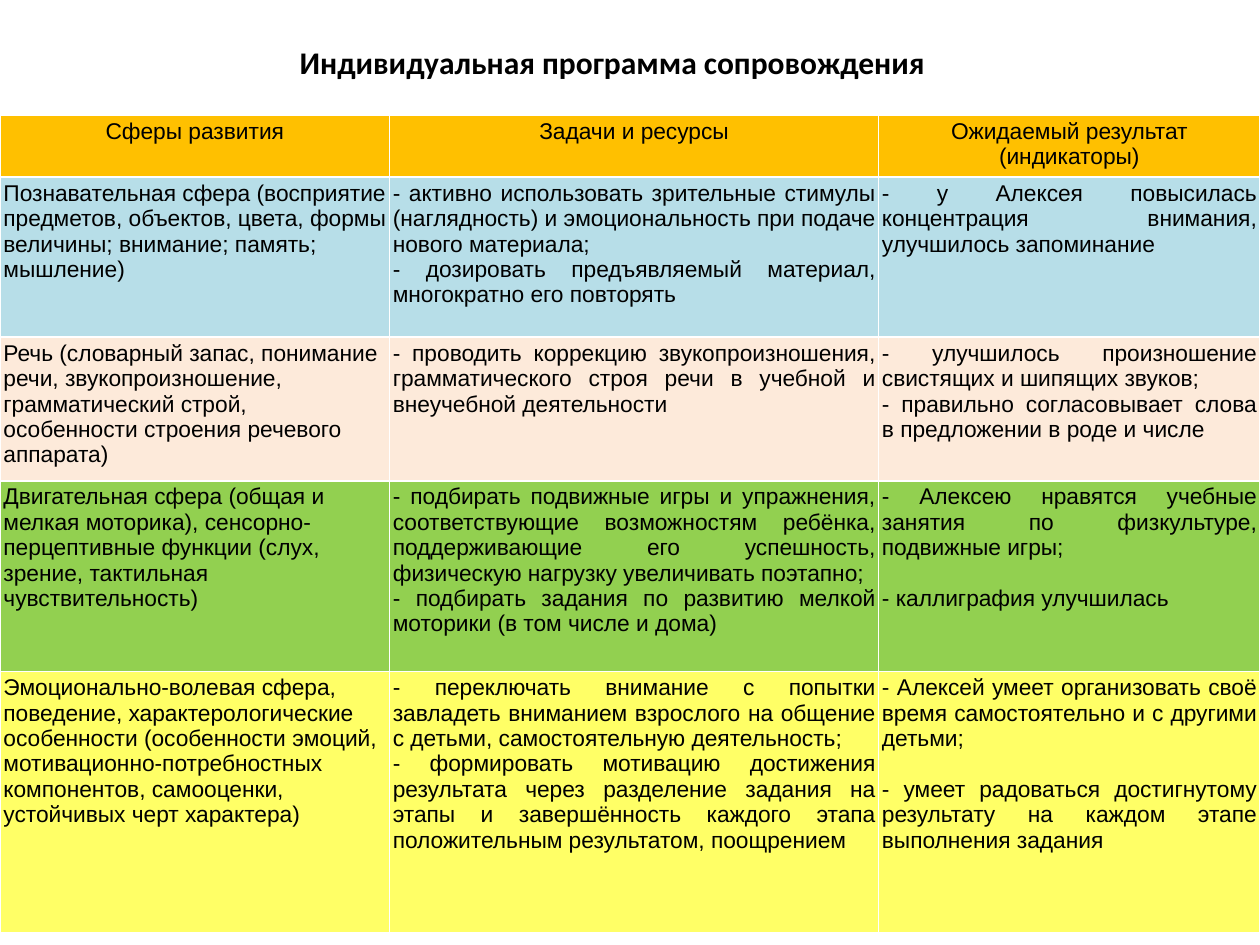
from pptx import Presentation
from pptx.dml.color import RGBColor
from pptx.enum.text import MSO_ANCHOR, PP_ALIGN
from pptx.oxml import parse_xml
from pptx.oxml.ns import nsdecls
from pptx.util import Pt

COLORS = {
    "text": "000000", "edge": "FFFFFF", "head": "FFC000", "mind": "B7DEE8",
    "speech": "FDEADA", "motion": "92D050", "mood": "FFFF66",
}
TITLE = {"name": "Calibri", "size": Pt(18), "bold": True}
BODY = {"name": "Arial", "size": Pt(13), "bold": False}
INSET = {f"margin_{side}": Pt(2) for side in ("left", "right", "top", "bottom")}
LEFT, MID, FULL = PP_ALIGN.LEFT, PP_ALIGN.CENTER, PP_ALIGN.JUSTIFY
WIDTHS = (222.5, 279.5, 218)

# fill, height, space before the last result, texts
ROWS = (
    ("head", 33, 0, (
        "Сферы развития",
        "Задачи и ресурсы",
        "Ожидаемый результат (индикаторы)")),
    ("mind", 91.5, 0, (
        "Познавательная сфера (восприятие предметов, объектов, цвета, формы "
        "величины; внимание; память; мышление)",
        "- активно использовать зрительные стимулы (наглядность) и "
        "эмоциональность при подаче нового материала;\n"
        "- дозировать предъявляемый материал, многократно его повторять",
        "- у Алексея повысилась концентрация внимания, улучшилось запоминание ")),
    ("speech", 81, 0, (
        "Речь (словарный запас, понимание речи, звукопроизношение, "
        "грамматический строй, особенности строения речевого аппарата)",
        "- проводить коррекцию звукопроизношения, грамматического строя речи "
        "в учебной и внеучебной деятельности ",
        "- улучшилось произношение свистящих и шипящих звуков; \n"
        "- правильно согласовывает слова в предложении в роде и числе")),
    ("motion", 109, 14.5, (
        "Двигательная сфера (общая и мелкая моторика), сенсорно-перцептивные "
        "функции (слух, зрение, тактильная чувствительность)",
        "- подбирать подвижные игры и упражнения, соответствующие возможностям "
        "ребёнка, поддерживающие его успешность, физическую нагрузку "
        "увеличивать поэтапно;\n"
        "- подбирать задания по развитию мелкой моторики (в том числе и дома)",
        "- Алексею нравятся учебные занятия по физкультуре, подвижные игры;\n"
        "- каллиграфия улучшилась")),
    ("mood", 149, 14.5, (
        "Эмоционально-волевая сфера, поведение, характерологические "
        "особенности (особенности эмоций, мотивационно-потребностных "
        "компонентов, самооценки, устойчивых черт характера)",
        "- переключать внимание с попытки завладеть вниманием взрослого на "
        "общение с детьми, самостоятельную деятельность;\n"
        "- формировать мотивацию достижения результата через разделение "
        "задания на этапы и завершённость каждого этапа положительным "
        "результатом, поощрением",
        "- Алексей умеет организовать своё время самостоятельно и с другими "
        "детьми;\n"
        "- умеет радоваться достигнутому результату на каждом этапе "
        "выполнения задания")),
)


def apply(item, values):
    """Set each named value on the item."""
    for key, value in values.items():
        setattr(item, key, value)


def write(frame, text, style, align):
    """Write one styled paragraph for each line of text."""
    frame.word_wrap = True
    frame.text = text
    for para in frame.paragraphs:
        para.alignment = align
        font = para.runs[0].font
        apply(font, style)
        font.color.rgb = RGBColor.from_string(COLORS["text"])


def edge(cell):
    """Draw a thin line on all four sides of a cell."""
    props = cell._tc.get_or_add_tcPr()
    for spot, tag in enumerate(("lnL", "lnR", "lnT", "lnB")):
        line = parse_xml(
            f'<a:{tag} {nsdecls("a")} w="{Pt(1)}"><a:solidFill>'
            f'<a:srgbClr val="{COLORS["edge"]}"/></a:solidFill></a:{tag}>')
        props.insert(spot, line)


def add_title(slide, text):
    """Add the centred heading."""
    box = slide.shapes.add_textbox(Pt(88), Pt(21), Pt(524), Pt(29))
    write(box.text_frame, text, TITLE, MID)


def fill_cell(cell, text, color, align):
    """Give a cell its text, fill, insets and edges."""
    apply(cell, {**INSET, "vertical_anchor": MSO_ANCHOR.TOP})
    write(cell.text_frame, text, BODY, align)
    cell.fill.solid()
    cell.fill.fore_color.rgb = RGBColor.from_string(COLORS[color])
    edge(cell)


def add_grid(slide):
    """Add the table of spheres, tasks and results."""
    high = sum(row[1] for row in ROWS)
    table = slide.shapes.add_table(
        len(ROWS), len(WIDTHS), Pt(0), Pt(66), Pt(sum(WIDTHS)), Pt(high)).table
    for col, width in zip(table.columns, WIDTHS):
        col.width = Pt(width)
    for num, (color, height, gap, texts) in enumerate(ROWS):
        table.rows[num].height = Pt(height)
        aligns = (LEFT, FULL, FULL) if num else (MID,) * 3
        for col, (text, align) in enumerate(zip(texts, aligns)):
            fill_cell(table.cell(num, col), text, color, align)
        if gap:
            last = table.cell(num, len(WIDTHS) - 1).text_frame.paragraphs[-1]
            last.space_before = Pt(gap)


def main():
    """Build and save the slide."""
    deck = Presentation()
    apply(deck, {"slide_width": Pt(720), "slide_height": Pt(540)})
    slide = deck.slides.add_slide(deck.slide_layouts[6])
    add_title(slide, "Индивидуальная программа сопровождения")
    add_grid(slide)
    deck.save("out.pptx")


if __name__ == "__main__":
    main()
